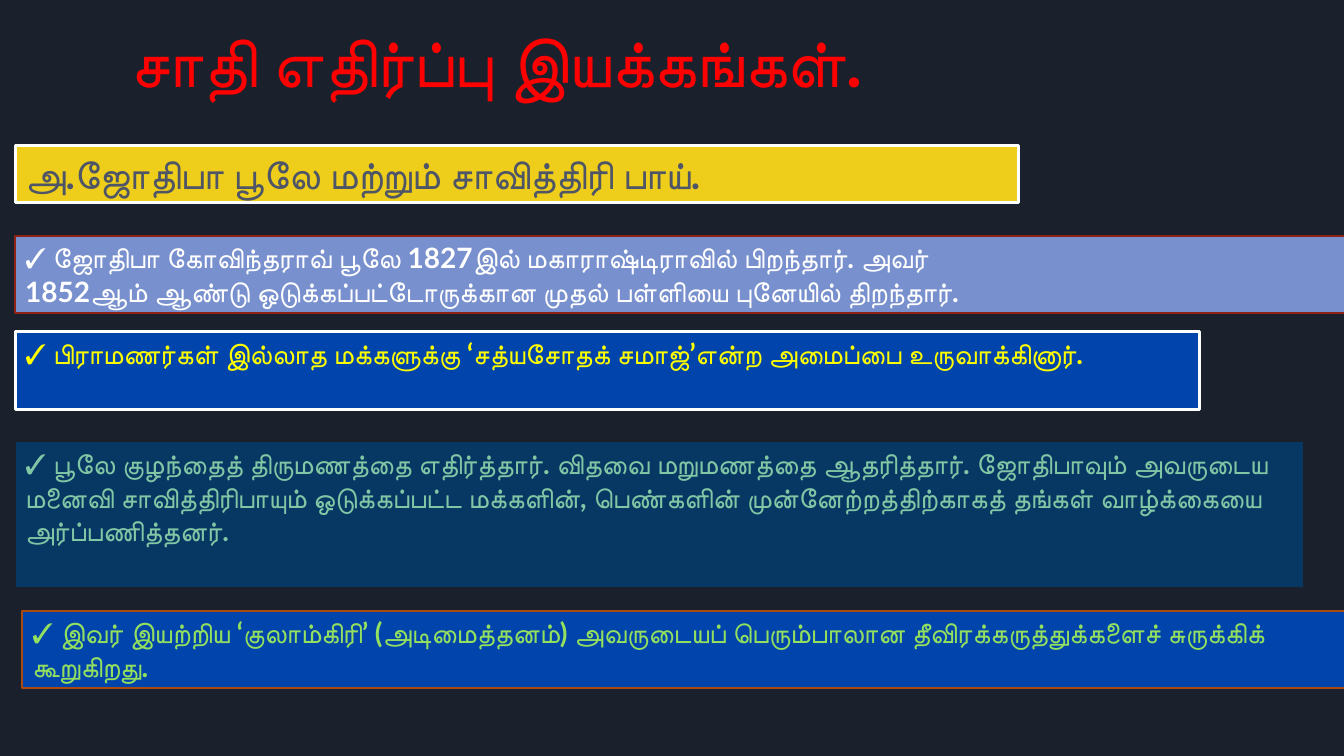
"""Build a slide on anti-caste movements with a title and coloured text bands."""
import dataclasses

import pptx
import pptx.dml.color
import pptx.enum.shapes
import pptx.enum.text
import pptx.oxml
import pptx.oxml.ns
import pptx.util


@dataclasses.dataclass(frozen=True)
class Theme:
    font: str = "Lato"
    title_size: int = 48
    heading_size: int = 28
    body_size: int = 20
    night: str = "1B212C"
    red: str = "FF0000"
    gold: str = "EECE1A"
    slate: str = "4E5567"
    white: str = "FFFFFF"
    periwinkle: str = "7890CD"
    brick: str = "8F2212"
    blue: str = "0145AC"
    yellow: str = "FFFF00"
    navy: str = "073763"
    mint: str = "82C7A5"
    rust: str = "A84A11"
    lime: str = "93DF5F"


def rgb(value):
    return pptx.dml.color.RGBColor.from_string(value)


def set_attributes(target, values):
    for name, value in values.items():
        setattr(target, name, value)


class SlideBuilder:
    def __init__(self, presentation, theme):
        self.theme = theme
        self.slide = presentation.slides.add_slide(presentation.slide_layouts[5])
        background = self.slide.background.fill
        background.solid()
        background.fore_color.rgb = rgb(theme.night)

    def title(self, box, text):
        shape = self.slide.shapes.title
        position = dict(zip(("left", "top", "width", "height"), map(pptx.util.Inches, box)))
        set_attributes(shape, position)
        self.paint(shape, self.theme.night, self.theme.night, 1.5)
        self.set_text(shape, [text], self.theme.title_size, self.theme.red)

    def band(self, box, fill, outline, line_width, lines, size, color):
        shape = self.slide.shapes.add_shape(
            pptx.enum.shapes.MSO_SHAPE.RECTANGLE, *map(pptx.util.Inches, box))
        shape.shadow.inherit = False
        self.paint(shape, fill, outline, line_width)
        self.set_text(shape, lines, size, color)

    def paint(self, shape, fill, outline, line_width):
        shape.fill.solid()
        shape.fill.fore_color.rgb = rgb(fill)
        shape.line.color.rgb = rgb(outline)
        shape.line.width = pptx.util.Pt(line_width)

    def set_text(self, shape, lines, size, color):
        frame = shape.text_frame
        set_attributes(frame, {
            "word_wrap": True,
            "auto_size": pptx.enum.text.MSO_AUTO_SIZE.NONE,
            "vertical_anchor": pptx.enum.text.MSO_ANCHOR.TOP,
            "margin_left": pptx.util.Inches(0.1),
            "margin_right": pptx.util.Inches(0.1),
            "margin_top": pptx.util.Inches(0.05),
            "margin_bottom": pptx.util.Inches(0.05),
        })
        frame.text = "\n".join(lines)
        for paragraph in frame.paragraphs:
            paragraph.alignment = pptx.enum.text.PP_ALIGN.LEFT
            run = paragraph.runs[0]
            set_attributes(run.font, {
                "name": self.theme.font, "size": pptx.util.Pt(size), "bold": True})
            run.font.color.rgb = rgb(color)
            complex_script = pptx.oxml.parse_xml(
                f'<a:cs {pptx.oxml.ns.nsdecls("a")} typeface="{self.theme.font}"/>')
            run.font._element.append(complex_script)


def main():
    theme = Theme()
    presentation = pptx.Presentation()
    set_attributes(presentation, {
        "slide_width": pptx.util.Inches(13.33), "slide_height": pptx.util.Inches(7.5)})
    builder = SlideBuilder(presentation, theme)
    builder.title((1.19, 0.15, 10.85, 0.91), "சாதி எதிர்ப்பு இயக்கங்கள்.")
    builder.band(
        (0.15, 1.44, 9.95, 0.57), theme.gold, theme.white, 2,
        ["அ.ஜோதிபா பூலே மற்றும் சாவித்திரி பாய்."], theme.heading_size, theme.slate)

    facts = [
        ((0.15, 2.34, 13.34, 0.77), theme.periwinkle, theme.brick, 1.5, theme.white,
         ["✓ ஜோதிபா கோவிந்தராவ் பூலே 1827இல் மகாராஷ்டிராவில் பிறந்தார். அவர்",
          "1852ஆம் ஆண்டு ஒடுக்கப்பட்டோருக்கான முதல் பள்ளியை புனேயில் திறந்தார்."]),
        ((0.15, 3.29, 11.75, 0.77), theme.blue, theme.white, 2, theme.yellow,
         ["✓ பிராமணர்கள் இல்லாத மக்களுக்கு ‘சத்யசோதக் சமாஜ்’என்ற அமைப்பை "
          "உருவாக்கினார்."]),
        ((0.15, 4.38, 12.78, 1.45), theme.navy, theme.night, 1, theme.mint,
         ["✓ பூலே குழந்தைத் திருமணத்தை எதிர்த்தார். விதவை மறுமணத்தை ஆதரித்தார். "
          "ஜோதிபாவும் அவருடைய மனைவி சாவித்திரிபாயும் ஒடுக்கப்பட்ட மக்களின், "
          "பெண்களின் முன்னேற்றத்திற்காகத் தங்கள் வாழ்க்கையை அர்ப்பணித்தனர்."]),
        ((0.22, 6.06, 13.19, 0.77), theme.blue, theme.rust, 1.5, theme.lime,
         ["✓ இவர் இயற்றிய ‘குலாம்கிரி’ (அடிமைத்தனம்) அவருடையப் பெரும்பாலான "
          "தீவிரக்கருத்துக்களைச் சுருக்கிக் கூறுகிறது."]),
    ]
    for box, fill, outline, line_width, color, lines in facts:
        builder.band(box, fill, outline, line_width, lines, theme.body_size, color)
    presentation.save("out.pptx")


if __name__ == "__main__":
    main()
